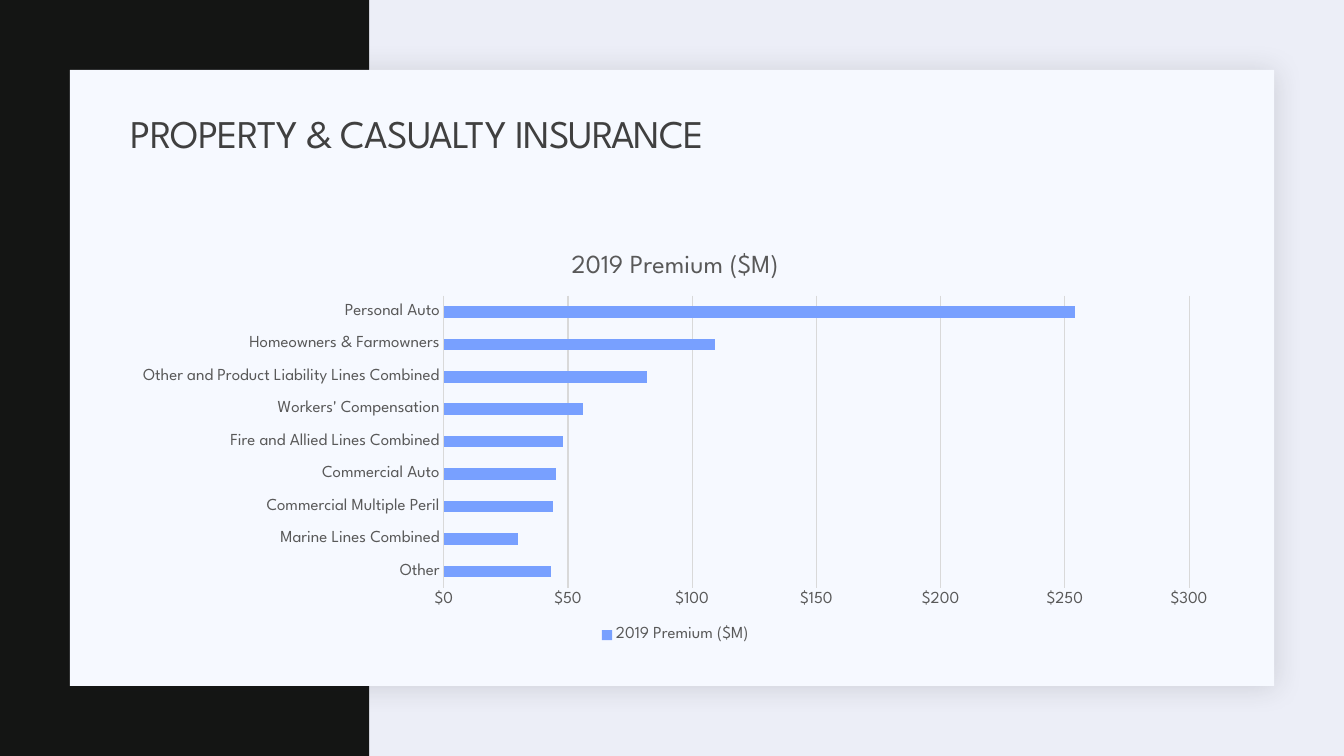
"""Build the property and casualty insurance slide with its premium bar chart."""
from lxml.etree import SubElement
from pptx import Presentation
from pptx.chart.data import CategoryChartData
from pptx.dml.color import RGBColor
from pptx.enum.chart import XL_CHART_TYPE, XL_LEGEND_POSITION, XL_TICK_MARK
from pptx.enum.shapes import MSO_SHAPE
from pptx.enum.text import MSO_ANCHOR
from pptx.oxml.ns import qn
from pptx.util import Inches, Pt

WIDE, HIGH = 13.33, 7.5
FONT = "League Spartan"
GRAY, RULE = "595959", "D9D9D9"
NAME = "2019 Premium ($M)"
LINES = {
    "Other": 43,
    "Marine Lines Combined": 30,
    "Commercial Multiple Peril": 44,
    "Commercial Auto": 45,
    "Fire and Allied Lines Combined": 48,
    "Workers' Compensation": 56,
    "Other and Product Liability Lines Combined": 82,
    "Homeowners & Farmowners": 109,
    "Personal Auto": 254,
}


def color(code):
    return RGBColor.from_string(code)


def place(left, top, width, height):
    return [Inches(part * full / 100) for part, full in
            zip((left, top, width, height), (WIDE, HIGH, WIDE, HIGH))]


def style(font, size, code=GRAY):
    font.name, font.size, font.bold = FONT, Pt(size), False
    font.color.rgb = color(code)


def paint(item, code):
    item.fill.solid()
    item.fill.fore_color.rgb = color(code)


def rule(line):
    line.color.rgb = color(RULE)
    line.width = Pt(0.75)


def panel(slide, box, code):
    shape = slide.shapes.add_shape(MSO_SHAPE.RECTANGLE, *place(*box))
    paint(shape, code)
    shape.line.fill.background()
    shape.shadow.inherit = False
    return shape


def shade(shape, code, alpha, blur, dist, angle):
    effect = shape._element.spPr.find(qn("a:effectLst"))
    outer = SubElement(effect, qn("a:outerShdw"), blurRad=str(Pt(blur)),
                       dist=str(Pt(dist)), dir=str(angle * 60000),
                       algn="tl", rotWithShape="0")
    tint = SubElement(outer, qn("a:srgbClr"), val=code)
    SubElement(tint, qn("a:alpha"), val=str(alpha * 1000))


def write(slide, box, text, size=12, code=GRAY, lead=1.0, track=0):
    frame = slide.shapes.add_textbox(*place(*box)).text_frame
    frame.word_wrap = True
    frame.vertical_anchor = MSO_ANCHOR.MIDDLE
    para = frame.paragraphs[0]
    para.line_spacing = lead
    run = para.add_run()
    run.text = text
    style(run.font, size, code)
    run.font._element.set("spc", str(int(track * 100)))


def bars(slide, box, name, lines, code):
    data = CategoryChartData()
    data.categories = list(lines)
    data.add_series(name, [value * 10**6 for value in lines.values()])
    chart = slide.shapes.add_chart(
        XL_CHART_TYPE.BAR_CLUSTERED, *place(*box), data).chart
    style(chart.font, 10, "000000")

    chart.has_title = True
    title = chart.chart_title
    title.include_in_layout = False
    title.text_frame.text = name
    style(title.text_frame.paragraphs[0].runs[0].font, 18.6)

    chart.has_legend = True
    chart.legend.position = XL_LEGEND_POSITION.BOTTOM
    chart.legend.include_in_layout = False
    style(chart.legend.font, 12)

    for axis in (chart.category_axis, chart.value_axis):
        axis.major_tick_mark = axis.minor_tick_mark = XL_TICK_MARK.NONE
        style(axis.tick_labels.font, 12)
    rule(chart.category_axis.format.line)
    scale = chart.value_axis
    scale.format.line.fill.background()
    rule(scale.major_gridlines.format.line)
    scale.tick_labels.number_format = '"$"#,##0,,'
    scale.tick_labels.number_format_is_linked = False

    plot = chart.plots[0]
    plot.gap_width = 182
    plot.vary_by_categories = False
    paint(plot.series[0].format, code)
    plot.series[0].invert_if_negative = False


def main():
    deck = Presentation()
    deck.slide_width, deck.slide_height = Inches(WIDE), Inches(HIGH)
    slide = deck.slides.add_slide(deck.slide_layouts[6])
    paint(slide.background, "ECEEF7")
    panel(slide, (0, 0, 27.47, 100), "141514")
    card = panel(slide, (5.2, 9.25, 89.6, 81.5), "F6F9FF")
    shade(card, "1F2125", alpha=15, blur=20, dist=2, angle=45)
    bars(slide, (9, 30.8, 82.5, 54.8), NAME, LINES, "78A0FF")
    write(slide, (9, 13.73, 82.5, 8.53), "PROPERTY & CASUALTY INSURANCE",
          size=28, code="404040", lead=0.9, track=-0.5)
    deck.save("out.pptx")


if __name__ == "__main__":
    main()
